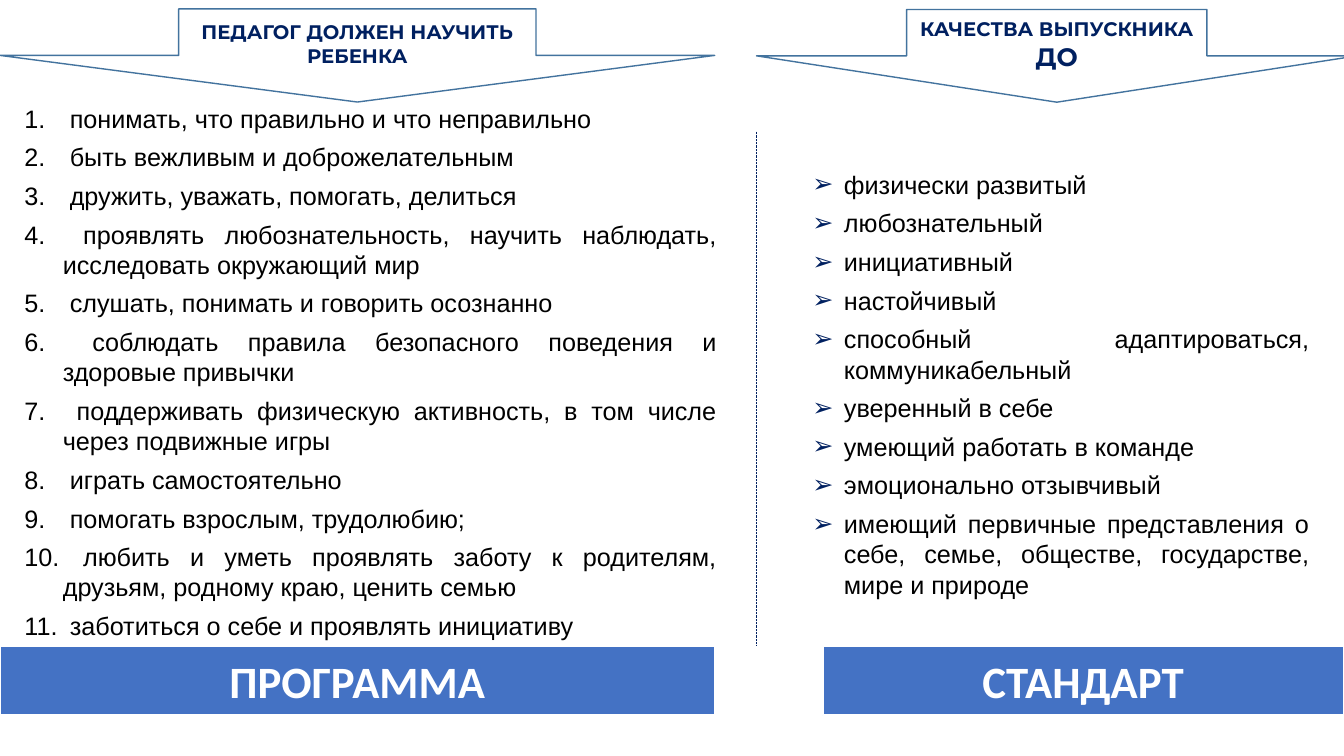
from lxml.etree import SubElement
from pptx import Presentation
from pptx.dml.color import RGBColor
from pptx.enum.dml import MSO_LINE
from pptx.enum.shapes import MSO_CONNECTOR, MSO_SHAPE
from pptx.enum.text import MSO_ANCHOR, PP_ALIGN
from pptx.oxml.ns import qn
from pptx.util import Pt

NAVY = RGBColor(0x00, 0x20, 0x60)
BLUE = RGBColor(0x44, 0x72, 0xC4)
OUTLINE = RGBColor(0x43, 0x73, 0x9E)
WHITE = RGBColor(0xFF, 0xFF, 0xFF)
BLACK = RGBColor(0x00, 0x00, 0x00)

SKILLS = [
    "понимать, что правильно и что неправильно",
    "быть вежливым и доброжелательным",
    "дружить, уважать, помогать, делиться",
    "проявлять любознательность, научить наблюдать, исследовать окружающий мир",
    "слушать, понимать и говорить осознанно",
    "соблюдать правила безопасного поведения и здоровые привычки",
    "поддерживать физическую активность, в том числе через подвижные игры",
    "играть самостоятельно",
    "помогать взрослым, трудолюбию;",
    "любить и уметь проявлять заботу к родителям, друзьям, родному краю, ценить семью",
    "заботиться о себе и проявлять инициативу",
]
QUALITIES = [
    "физически развитый",
    "любознательный",
    "инициативный",
    "настойчивый",
    "способный адаптироваться, коммуникабельный",
    "уверенный в себе",
    "умеющий работать в команде",
    "эмоционально отзывчивый",
    "имеющий первичные представления о себе, семье, обществе, государстве, мире и природе",
]


def add_span(para, text, font="Arial", size=18, color=BLACK, bold=False):
    span = para.add_run()
    span.text = text
    span.font.name = font
    span.font.size = Pt(size)
    span.font.color.rgb = color
    span.font.bold = bold


def add_label(page, kind, box, spans, fill, line, width):
    shape = page.shapes.add_shape(kind, *map(Pt, box))
    shape.shadow.inherit = False
    if fill is None:
        shape.fill.background()
    else:
        shape.fill.solid()
        shape.fill.fore_color.rgb = fill
    shape.line.color.rgb = line
    shape.line.width = Pt(width)
    frame = shape.text_frame
    frame.word_wrap = True
    frame.vertical_anchor = MSO_ANCHOR.MIDDLE
    para = frame.paragraphs[0]
    para.alignment = PP_ALIGN.CENTER
    for text, style in spans:
        add_span(para, text, bold=True, **style)


def add_arrow(page, box, *parts):
    spans = [(text, dict(font="Montserrat", size=size, color=NAVY)) for text, size in parts]
    add_label(page, MSO_SHAPE.DOWN_ARROW, box, spans, None, OUTLINE, 1)


def add_banner(page, box, text):
    spans = [(text, dict(font="Calibri", size=32, color=WHITE))]
    add_label(page, MSO_SHAPE.RECTANGLE, box, spans, BLUE, WHITE, 1.5)


def set_marker(para, indent, hanging, numbered):
    properties = para._p.get_or_add_pPr()
    properties.set("marL", str(Pt(indent)))
    properties.set("indent", str(-Pt(hanging)))
    if numbered:
        SubElement(properties, qn("a:buFont"), typeface="+mj-lt")
        SubElement(properties, qn("a:buAutoNum"), type="arabicPeriod")
    else:
        color = SubElement(properties, qn("a:buClr"))
        SubElement(color, qn("a:srgbClr"), val=str(NAVY))
        SubElement(properties, qn("a:buFont"), typeface="Arial")
        SubElement(properties, qn("a:buChar"), char="➢")


def add_list(page, box, items, inset, indent, hanging, numbered=False):
    frame = page.shapes.add_textbox(*map(Pt, box)).text_frame
    frame.word_wrap = True
    frame.margin_left = frame.margin_right = Pt(inset)
    frame.margin_top = frame.margin_bottom = Pt(inset)
    for index, item in enumerate(items):
        para = frame.add_paragraph() if index else frame.paragraphs[0]
        para.alignment = PP_ALIGN.JUSTIFY
        para.space_after = Pt(6)
        set_marker(para, indent, hanging, numbered)
        add_span(para, f" {item}" if numbered else item)


def add_divider(page, x, top, bottom):
    divider = page.shapes.add_connector(MSO_CONNECTOR.STRAIGHT, Pt(x), Pt(top), Pt(x), Pt(bottom))
    divider.line.color.rgb = NAVY
    divider.line.width = Pt(0.5)
    divider.line.dash_style = MSO_LINE.ROUND_DOT
    SubElement(divider._element.spPr, qn("a:effectLst"))


def add_program(page, left, top, width):
    add_list(page, (left, top + 60, width + 8.6, 421), SKILLS, 7.2, 37.8, 27.4, numbered=True)
    add_arrow(page, (left, top, width, 66.6), ("ПЕДАГОГ ДОЛЖЕН НАУЧИТЬ РЕБЕНКА", 14))
    add_banner(page, (left, top + 455, width, 49.5), "ПРОГРАММА")


def add_standard(page, left, top, width):
    add_list(page, (left + 30.5, top + 105, 373.7, 306), QUALITIES, 9.4, 22.5, 22.5)
    add_banner(page, (left + 47.2, top + 455, 372.2, 49.5), "СТАНДАРТ")
    add_arrow(page, (left, top + 0.5, width, 66.2), ("КАЧЕСТВА ВЫПУСКНИКА ", 14), ("ДО", 18))
    add_divider(page, left, top + 87.8, top + 455)


def main():
    deck = Presentation()
    deck.slide_width, deck.slide_height = Pt(960), Pt(540)
    page = deck.slides.add_slide(deck.slide_layouts[6])
    add_program(page, 0, 6.3, 510.5)
    add_standard(page, 540.4, 6.3, 429)
    deck.save("out.pptx")


if __name__ == "__main__":
    main()
